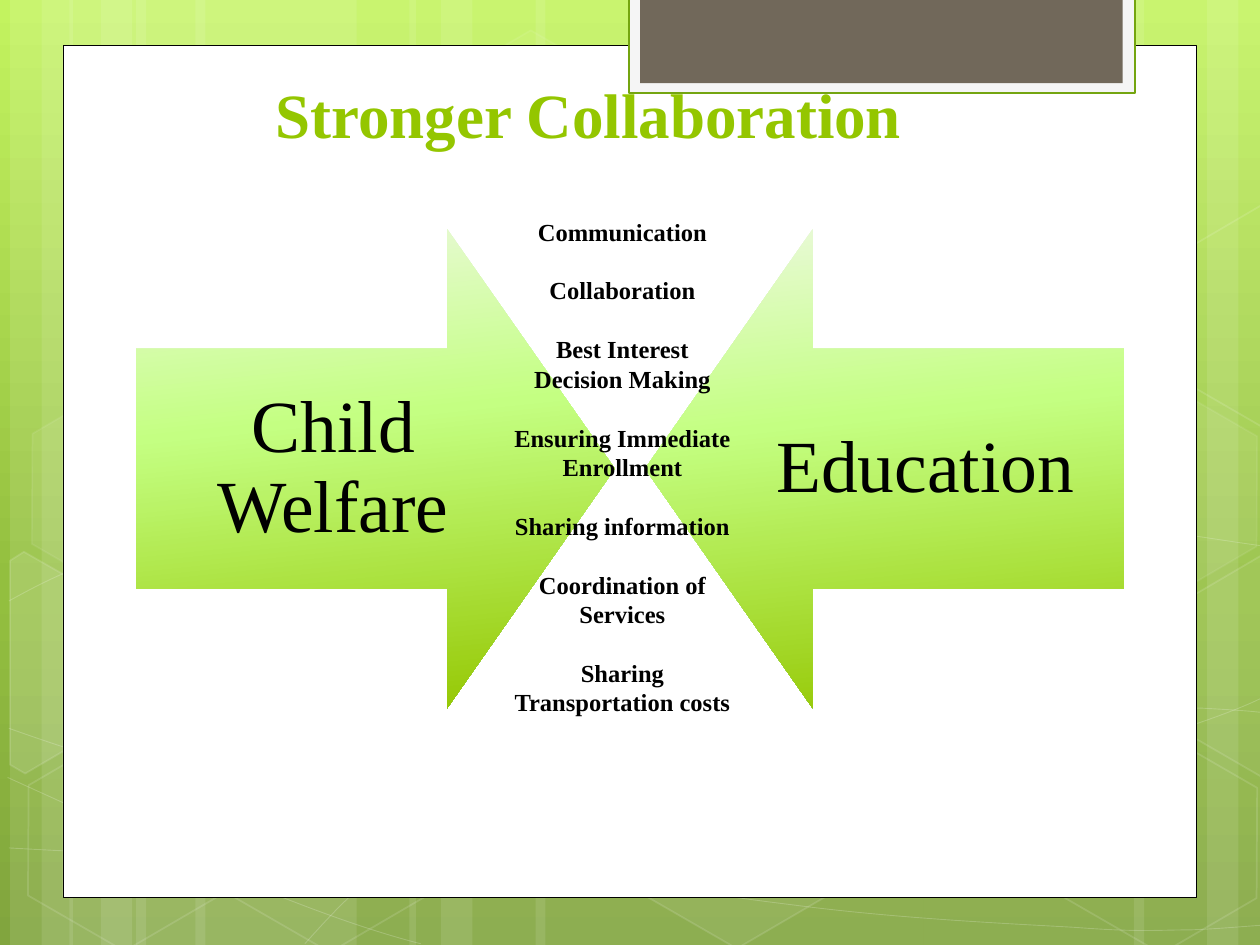
from pptx import Presentation
from pptx.dml.color import RGBColor
from pptx.enum.shapes import MSO_SHAPE
from pptx.enum.text import MSO_ANCHOR, PP_ALIGN
from pptx.oxml.ns import qn
from pptx.util import Inches, Pt
from lxml import etree

RECTANGLE, HEXAGON = MSO_SHAPE.RECTANGLE, MSO_SHAPE.HEXAGON
RIGHT_ARROW, LEFT_ARROW = MSO_SHAPE.RIGHT_ARROW, MSO_SHAPE.LEFT_ARROW
TOP, MIDDLE, BOTTOM = MSO_ANCHOR.TOP, MSO_ANCHOR.MIDDLE, MSO_ANCHOR.BOTTOM
CENTER = PP_ALIGN.CENTER

WHITE = RGBColor(0xFF, 0xFF, 0xFF)
BLACK = RGBColor(0x00, 0x00, 0x00)
LIME = RGBColor(0x94, 0xC6, 0x00)
TAB_FRAME = RGBColor(0xF5, 0xF5, 0xF5)
TAB_EDGE = RGBColor(0x74, 0xA5, 0x10)
TAB_BROWN = RGBColor(0x71, 0x68, 0x5A)
BACKGROUND_STOPS = [(0, RGBColor(0xC3, 0xF3, 0x5F)), (62, RGBColor(0x93, 0xBF, 0x3F)),
                    (100, RGBColor(0x81, 0xA5, 0x3E))]
ARROW_STOPS = [(0, RGBColor(0xEA, 0xF9, 0xDA)), (40, RGBColor(0xC4, 0xFF, 0x82)),
               (100, LIME)]
FONT = "Times New Roman"

# Background stripes: left, width
STRIPES = [(1.08, 1.75), (0.08, 0.5), (0.33, 0.83), (1.55, 1.75), (0.55, 0.5), (0.8, 0.83),
           (7.33, 1.75), (9.58, 0.5), (9, 0.83), (4.25, 3.08), (3.25, 0.5), (3.5, 0.83)]

# Background waves: start point, then Bezier segments (two controls and an end)
# or straight segments (an end only)
WAVES = [
    [(0.07, 6.73), (0.61, 6.76, 1.15, 6.79, 1.9, 6.78), (2.65, 6.77, 3.58, 6.75, 4.58, 6.65),
     (5.58, 6.55, 7, 6.36, 7.92, 6.17), (8.83, 5.98, 9.77, 5.68, 10.07, 5.51)],
    [(0.07, 4.77), (0.36, 4.61, 0.65, 4.46, 1.21, 4.31), (1.78, 4.16, 2.59, 3.94, 3.47, 3.87),
     (4.36, 3.8, 5.44, 3.79, 6.54, 3.87), (7.64, 3.95, 9.47, 4.26, 10.07, 4.34)],
    [(0.06, 6.17), (1.27, 6.72, 2.47, 7.27, 3.34, 7.49)],
    [(0.07, 5.78), (0.38, 5.89, 0.7, 6, 1.28, 6.16), (1.86, 6.31, 2.73, 6.56, 3.57, 6.73),
     (4.4, 6.9, 5.45, 7.08, 6.28, 7.18), (7.11, 7.29, 8, 7.33, 8.53, 7.36),
     (9.05, 7.4, 9.19, 7.38, 9.45, 7.38), (9.71, 7.37, 9.89, 7.35, 10.07, 7.34)],
    [(2.42, 7.49), (2.6, 7.29, 2.78, 7.09, 3.02, 6.91), (3.26, 6.73, 3.6, 6.53, 3.88, 6.39),
     (4.16, 6.25, 4.33, 6.19, 4.7, 6.09), (5.06, 5.99, 5.73, 5.85, 6.08, 5.78),
     (6.44, 5.71, 6.49, 5.71, 6.8, 5.69), (7.11, 5.66, 7.6, 5.63, 7.94, 5.62),
     (8.29, 5.61, 8.86, 5.62, 8.86, 5.62), (9.53, 5.62),
     (9.71, 5.63, 9.88, 5.64, 9.97, 5.65), (10.06, 5.66, 10.03, 5.65, 10.06, 5.66)],
]

# Hexagons: left, top, fill opacity (None is unfilled), line opacity
HEXAGONS = [(3.34, 0.36, 4, 8), (4.97, 5.89, 6, 12), (0.11, 5.91, None, 12),
            (0.14, 3.12, 7, 8), (1.74, 5.92, None, 12), (7.53, 4.53, 10, 12),
            (8.34, 5.93, None, 12), (8.34, 3.14, 7, 8)]

# Hexagons cut by the slide edge: outline, fill opacity
CUT_HEXAGONS = [
    ([(0.08, 4.45), (0.19, 4.38), (0.96, 4.82), (0.95, 5.7), (0.2, 6.14), (0.08, 6.07)], 10),
    ([(9.26, 4.85), (10.01, 4.41), (10.09, 4.46), (10.09, 6.13), (10.02, 6.17), (9.26, 5.73)], 4),
    ([(9.26, 2.07), (10.01, 1.63), (10.1, 1.68), (10.09, 3.35), (10.02, 3.39), (9.26, 2.95)], None),
]

SHARED_TOPICS = ["Communication", "Collaboration", "Best Interest Decision Making",
                 "Ensuring Immediate Enrollment", "Sharing information",
                 "Coordination of Services", "Sharing Transportation costs"]


def set_opacity(fill, color, percent):
    fill.solid()
    fill.fore_color.rgb = color
    if percent < 100:
        solid = fill._xPr.find(qn("a:solidFill"))
        etree.SubElement(solid[0], qn("a:alpha"), val=str(percent * 1000))


def set_gradient(fill, owner, stops, angle):
    fill.gradient()
    fill.gradient_angle = 360 - angle
    stop_list = next(owner.iter(qn("a:gsLst")))
    for old_stop in list(stop_list):
        stop_list.remove(old_stop)
    for position, color in stops:
        stop = etree.SubElement(stop_list, qn("a:gs"), pos=str(position * 1000))
        etree.SubElement(stop, qn("a:srgbClr"), val=str(color))


def style(shape, fill=None, fill_opacity=100, line=None, width=1, line_opacity=100):
    shape.shadow.inherit = False
    if fill is None or fill_opacity is None:
        shape.fill.background()
    else:
        set_opacity(shape.fill, fill, fill_opacity)
    if line is None:
        shape.line.fill.background()
    else:
        shape.line.width = Pt(width)
        set_opacity(shape.line.fill, line, line_opacity)


def add_preset(slide, kind, box, **look):
    shape = slide.shapes.add_shape(kind, *map(Inches, box))
    style(shape, **look)
    return shape


def add_outline(slide, points, close, **look):
    start, *rest = [(Inches(x), Inches(y)) for x, y in points]
    builder = slide.shapes.build_freeform(*start)
    builder.add_line_segments(rest, close=close)
    shape = builder.convert_to_shape()
    style(shape, **look)
    return shape


def add_wave(slide, start, *segments):
    points = [start]
    for segment in segments:
        points.extend(zip(segment[::2], segment[1::2]))
    wave = add_outline(slide, points, False, line=WHITE, width=0.5, line_opacity=20)
    # Join the points of each Bezier segment into one curve
    lines = iter(list(wave.element.iter(qn("a:lnTo"))))
    for segment in segments:
        first = next(lines)
        if len(segment) == 6:
            first.tag = qn("a:cubicBezTo")
            for follower in (next(lines), next(lines)):
                first.append(follower[0])
                follower.getparent().remove(follower)


def add_text(slide, box, lines, size, color=BLACK, bold=False, anchor=TOP, inset=None, **spacing):
    frame = slide.shapes.add_textbox(*map(Inches, box)).text_frame
    frame.word_wrap = True
    frame.vertical_anchor = anchor
    if inset is not None:
        for side in ("left", "right", "top", "bottom"):
            setattr(frame, f"margin_{side}", Inches(inset))
    for index, line in enumerate(lines):
        paragraph = frame.add_paragraph() if index else frame.paragraphs[0]
        for name, value in {"alignment": CENTER, **spacing}.items():
            setattr(paragraph, name, value)
        run = paragraph.add_run()
        run.text = line
        for name, value in {"name": FONT, "size": Pt(size), "bold": bold}.items():
            setattr(run.font, name, value)
        run.font.color.rgb = color


def add_backdrop(slide):
    set_gradient(slide.background.fill, slide.element, BACKGROUND_STOPS, 90)
    for left, width in STRIPES:
        add_preset(slide, RECTANGLE, (left, 0, width, 7.5), fill=WHITE, fill_opacity=10)
    for wave in WAVES:
        add_wave(slide, *wave)
    for left, top, fill_opacity, line_opacity in HEXAGONS:
        hexagon = add_preset(slide, HEXAGON, (left, top, 1.75, 1.52), fill=WHITE,
                             fill_opacity=fill_opacity, line=WHITE, line_opacity=line_opacity)
        hexagon.adjustments[0] = 0.285
        hexagon.rotation = 30
    for outline, fill_opacity in CUT_HEXAGONS:
        add_outline(slide, outline, True, fill=WHITE, fill_opacity=fill_opacity,
                    line=WHITE, line_opacity=12)


def add_party(slide, kind, arrow_left, label_left, label):
    arrow = add_preset(slide, kind, (arrow_left, 1.82, 3.8, 3.8))
    arrow.adjustments[0], arrow.adjustments[1] = 0.5, 0.35
    set_gradient(arrow.fill, arrow.element, ARROW_STOPS, 84)
    add_text(slide, (label_left, 2.77, 3.13, 1.9), [label], 42, anchor=MIDDLE,
             inset=0.33, line_spacing=0.9)


def main():
    presentation = Presentation()
    presentation.slide_width, presentation.slide_height = Inches(10), Inches(7.5)
    slide = presentation.slides.add_slide(presentation.slide_layouts[6])

    add_backdrop(slide)

    # White panel and the tab at its top
    add_preset(slide, RECTANGLE, (0.5, 0.36, 9, 6.76), fill=WHITE, line=BLACK, width=0.5)
    add_preset(slide, RECTANGLE, (4.99, -0.02, 4.02, 0.76), fill=TAB_FRAME,
               line=TAB_EDGE, width=1.25)
    add_preset(slide, RECTANGLE, (5.08, -0.02, 3.83, 0.68), fill=TAB_BROWN)

    add_text(slide, (0.83, 0.58, 7.68, 0.67), ["Stronger Collaboration"], 36,
             color=LIME, bold=True, anchor=BOTTOM)

    # Two parties meeting, with what they share between them
    add_party(slide, RIGHT_ARROW, 1.08, 1.08, "Child Welfare")
    add_party(slide, LEFT_ARROW, 5.12, 5.78, "Education")
    add_text(slide, (3.98, 1.67, 1.92, 4.71), SHARED_TOPICS, 14, bold=True,
             space_after=Pt(16.8))

    presentation.save("out.pptx")


if __name__ == "__main__":
    main()
